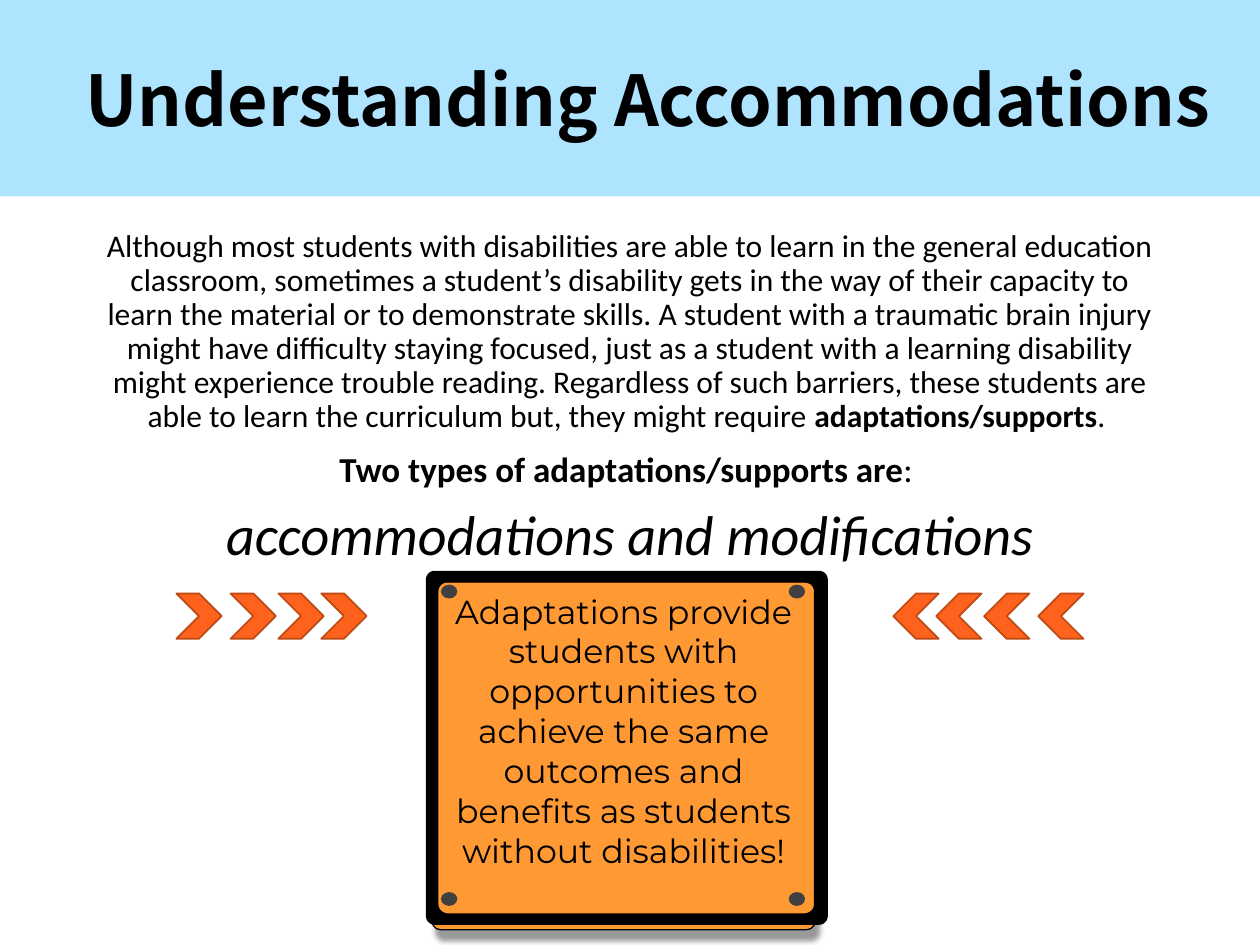
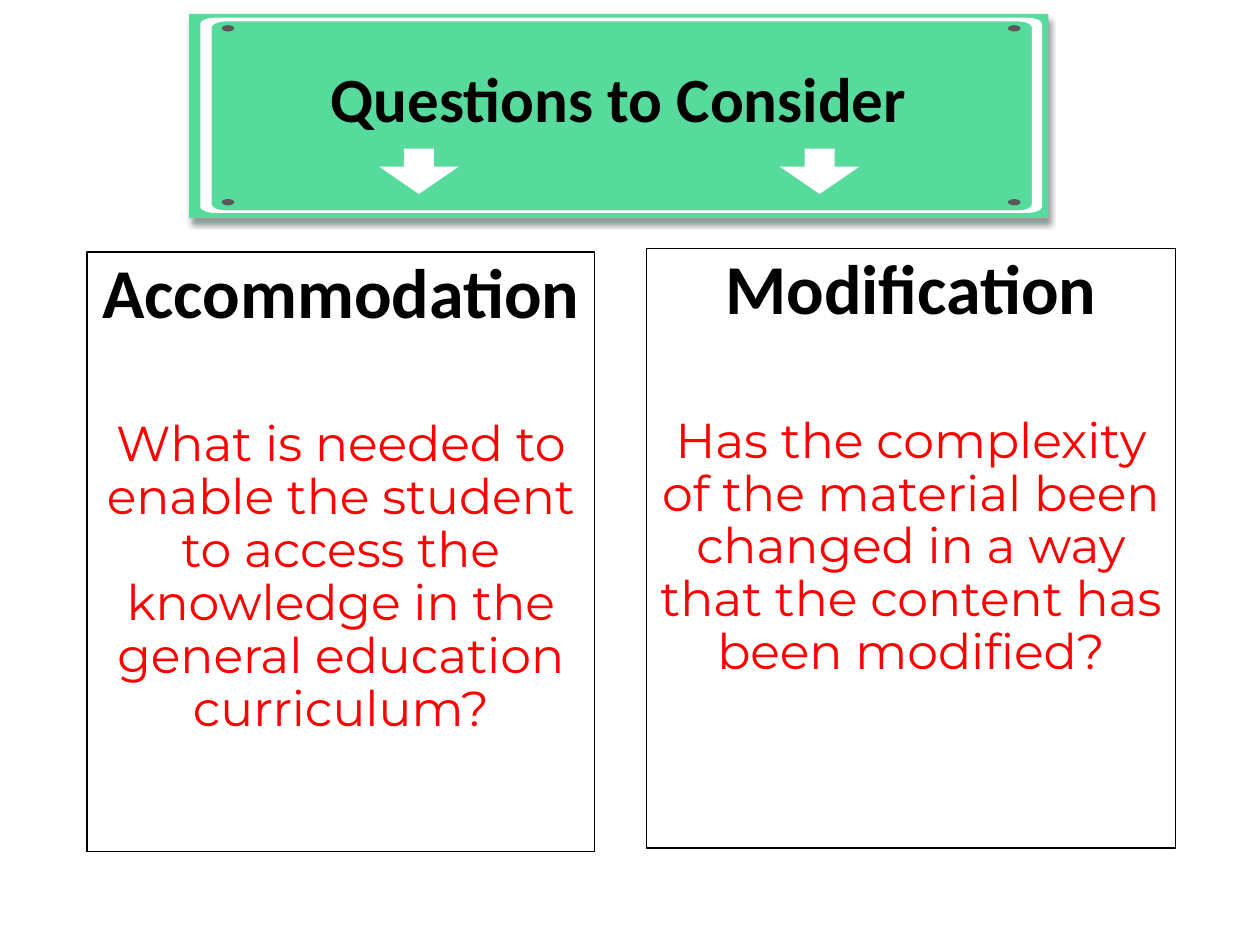
import math
import lxml.etree
import pptx
import pptx.dml.color
import pptx.enum.shapes
import pptx.enum.text
import pptx.oxml.ns
import pptx.util

Inches = pptx.util.Inches
Pt = pptx.util.Pt
kind = pptx.enum.shapes.MSO_SHAPE
anchor = pptx.enum.text.MSO_ANCHOR
center = pptx.enum.text.PP_ALIGN.CENTER
color = pptx.dml.color.RGBColor.from_string
qn = pptx.oxml.ns.qn

# Shared text formats
title = {"name": "Noto Sans CJK SC", "size": Pt(40), "bold": True}
head = {"name": "Calibri", "size": Pt(40), "bold": True}
label = {"name": "Calibri", "size": Pt(36), "bold": True}
plain = {"name": "Calibri", "size": Pt(18)}
lead = {"name": "Calibri", "size": Pt(20)}
slant = {"name": "Calibri", "size": Pt(32), "italic": True}
note = {"name": "Montserrat", "size": Pt(19)}
query = {"name": "Montserrat", "size": Pt(28)}
strong = {"bold": True}
tight = {"line_spacing": 0.9, "space_before": Pt(10)}


def paint(shape, fill=None, line=None, width=0.75, drop=None):
    """Set fill, line and, where drop gives a distance in points, a shadow."""
    shape.shadow.inherit = False
    if fill:
        shape.fill.solid()
        shape.fill.fore_color.rgb = color(fill)
    else:
        shape.fill.background()
    if line:
        shape.line.color.rgb = color(line)
        shape.line.width = Pt(width)
    else:
        shape.line.fill.background()
    if drop:
        effects = shape.element.spPr.find(qn("a:effectLst"))
        shade = lxml.etree.SubElement(
            effects, qn("a:outerShdw"), blurRad=str(Pt(3)), dist=str(Pt(drop)),
            dir=str(70 * 60000), algn="ctr", rotWithShape="0")
        tone = lxml.etree.SubElement(shade, qn("a:srgbClr"), val="000000")
        lxml.etree.SubElement(tone, qn("a:alpha"), val="40000")
    return shape


def write(shape, paras, ink="000000", **opts):
    """Fill a shape with (paragraph format, runs, colour) entries."""
    frame = shape.text_frame
    for key, val in {"word_wrap": True, "vertical_anchor": anchor.TOP, **opts}.items():
        setattr(frame, key, val)
    for i, (form, runs, *tint) in enumerate(paras):
        para = frame.add_paragraph() if i else frame.paragraphs[0]
        para.alignment = center
        for key, val in form.items():
            setattr(para, key, val)
        for words, look in runs:
            run = para.add_run()
            run.text = words
            run.font.color.rgb = color(tint[0] if tint else ink)
            for key, val in look.items():
                setattr(run.font, key, val)


deck = pptx.Presentation()
deck.slide_width, deck.slide_height = Inches(10), Inches(7.5)
intro, asks = [deck.slides.add_slide(deck.slide_layouts[6]) for _ in range(2)]

# Slide 1: body text and title band
body = intro.shapes.add_textbox(*map(Inches, (0.69, 1.78, 8.62, 4.76)))
write(body, [
    (tight, [
        ("Although most students with disabilities are able to learn in the general "
         "education classroom, sometimes a student’s disability gets in the way of their "
         "capacity to learn the material or to demonstrate skills. A student with a "
         "traumatic brain injury might have difficulty staying focused, just as a student "
         "with a learning disability might experience trouble reading. Regardless of such "
         "barriers, these students are able to learn the curriculum but, they might "
         "require ", plain),
        ("adaptations/supports", plain | strong),
        (". ", plain)]),
    (tight, [("Two types of adaptations/supports are", lead | strong), (": ", lead)]),
    (tight, [("accommodations and modifications", slant)]),
])
band = paint(intro.shapes.add_shape(kind.RECTANGLE, 0, 0, Inches(10), Inches(1.56)), "AFE4FF")
write(band, [({}, [("Understanding Accommodations", title)])],
      vertical_anchor=anchor.MIDDLE, margin_left=Inches(0.38))

# Sign boards: plate, rim as (box, corner radii) outside and inside, screws
signs = [
    {"slide": intro, "kind": kind.ROUNDED_RECTANGLE, "box": (3.43, 4.62, 3.04, 2.76),
     "fill": "FF9933", "line": "000000", "drop": 6, "rim": "000000",
     "rings": [((3.38, 4.53, 3.19, 2.81), 0.07, 0.07), ((3.48, 4.62, 2.98, 2.63), 0.08, 0.07)],
     "cols": (3.5, 6.26), "rows": (4.64, 7.08), "size": (0.13, 0.11), "screw": "404040",
     "look": note, "inset": 0.05,
     "text": "Adaptations provide students with opportunities to achieve the same "
             "outcomes and benefits as students without disabilities!"},
    {"slide": asks, "kind": kind.RECTANGLE, "box": (1.5, 0.11, 6.82, 1.62),
     "fill": "57DB9C", "line": None, "drop": 4, "rim": "FFFFFF",
     "rings": [((1.59, 0.14, 6.68, 1.55), 0.12, 0.05), ((1.68, 0.17, 6.51, 1.5), 0.11, 0.05)],
     "cols": (1.76, 8), "rows": (0.2, 1.58), "size": (0.1, 0.05), "screw": "595959",
     "look": label, "inset": 0.36, "text": "Questions to Consider"},
]
for sign in signs:
    shapes = sign["slide"].shapes
    plate = shapes.add_shape(sign["kind"], *map(Inches, sign["box"]))
    if sign["kind"] == kind.ROUNDED_RECTANGLE:
        plate.adjustments[0] = 0.025
    paint(plate, sign["fill"], sign["line"], drop=sign["drop"])
    write(plate, [({}, [(sign["text"], sign["look"])])], margin_top=Inches(sign["inset"]),
          margin_left=Inches(0.08), margin_right=Inches(0.08))

    # Rim: two rounded outlines in one shape, the inner one a hole
    pen = None
    for (x, y, w, h), rx, ry in sign["rings"]:
        points = []
        for turn in range(4):
            cx = x + w - rx if turn in (0, 3) else x + rx
            cy = y + h - ry if turn < 2 else y + ry
            for step in range(7):
                angle = math.radians(90 * turn + 15 * step)
                points.append((Inches(cx + rx * math.cos(angle)),
                               Inches(cy + ry * math.sin(angle))))
        if pen:
            pen.move_to(*points[0])
        else:
            pen = shapes.build_freeform(*points[0])
        pen.add_line_segments(points[1:], close=True)
    paint(pen.convert_to_shape(), sign["rim"])

    for left in sign["cols"]:
        for top in sign["rows"]:
            paint(shapes.add_shape(kind.OVAL, *map(Inches, (left, top, *sign["size"]))),
                  sign["screw"])

# Slide 1: chevrons, mirrored about the middle of the slide
side = 0.36
for left in (1.4, 1.83, 2.21, 2.55):
    for spot, turn in ((left, 0), (10 - left - side, 180)):
        mark = intro.shapes.add_shape(kind.CHEVRON, *map(Inches, (spot, 4.71, side, side)))
        mark.rotation = turn
        paint(mark, "FF621D", "BD4915", 1)

# Slide 2: arrows on the sign
for left in (3.01, 6.19):
    arrow = asks.shapes.add_shape(kind.DOWN_ARROW, *map(Inches, (left, 1.18, 0.63, 0.36)))
    arrow.adjustments[0], arrow.adjustments[1] = 0.38, 0.6
    paint(arrow, "FFFFFF")

# Slide 2: question panels
panels = [
    ((0.69, 2, 4.03, 4.76), "Accommodation",
     "What is needed to enable the student to access the knowledge in the general "
     "education curriculum?"),
    ((5.13, 1.97, 4.2, 4.76), "Modification",
     "Has the complexity of the material been changed in a way that the content has "
     "been modified?"),
]
for box, name, words in panels:
    panel = paint(asks.shapes.add_shape(kind.RECTANGLE, *map(Inches, box)), line="000000")
    write(panel, [(tight, [(name, head)]),
                  (tight | {"space_before": Pt(49)}, [(words, query)], "FF0000")])

deck.save("out.pptx")
